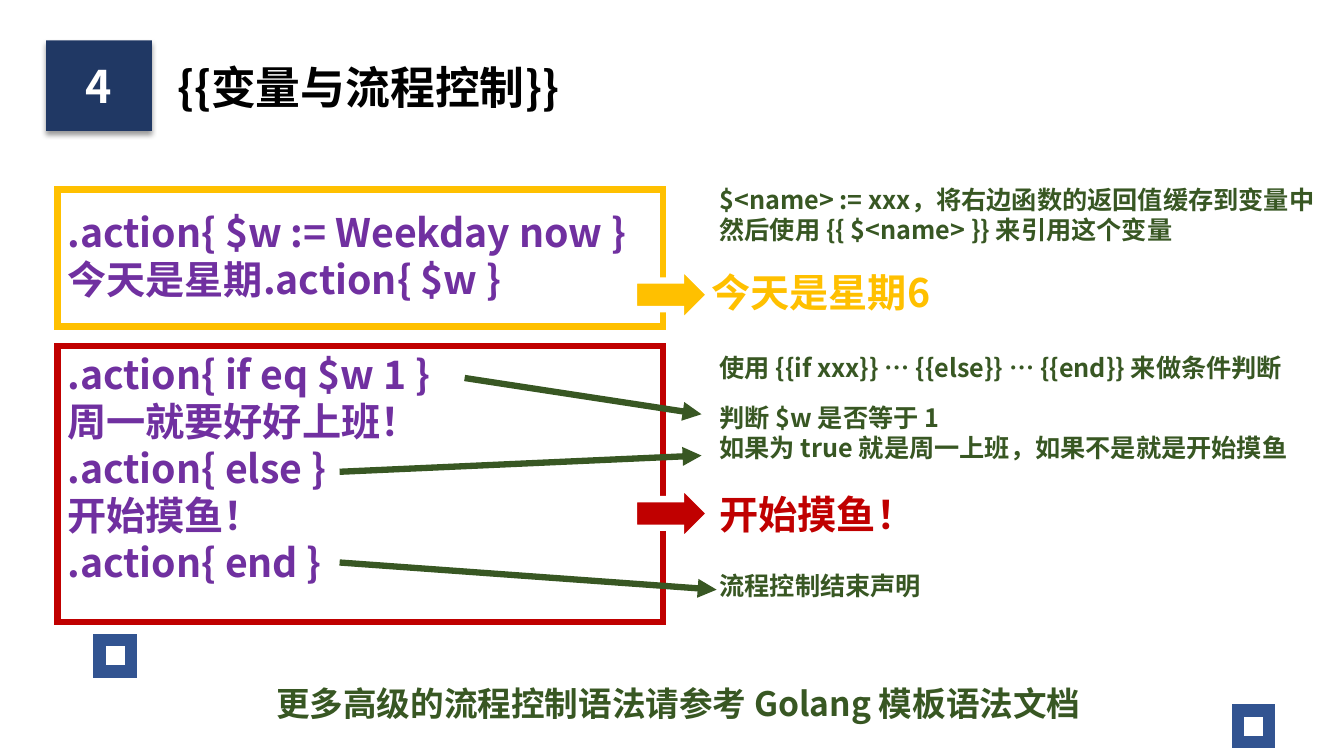
from lxml.etree import SubElement as Sub
from pptx import Presentation
from pptx.dml.color import RGBColor as RGB
from pptx.enum.shapes import MSO_CONNECTOR as Link, MSO_SHAPE as Kind
from pptx.enum.text import MSO_ANCHOR as Anchor, PP_ALIGN as Align
from pptx.oxml.ns import qn
from pptx.util import Pt

NAVY, BLUE, GREEN, PURPLE = "203864", "325491", "385723", "7030A0"
GOLD, RED, WHITE, BLACK = "FFC000", "C00000", "FFFFFF", "000000"


def color(text):
    return RGB.from_string(text)


def apply(obj, values):
    for name, value in values.items():
        setattr(obj, name, value)


class Page:
    font = "Noto Sans CJK SC"
    heavy = 4.5
    pitch = 1.2

    def __init__(self, slide):
        self.slide = slide
        self.shapes = slide.shapes

    def typeset(self, frame, lines, size, tint, align=Align.LEFT, gaps=None):
        """Fill a frame; gaps maps a line number to the space before it."""
        frame.word_wrap = True
        for i, line in enumerate(lines):
            para = frame.paragraphs[0] if i == 0 else frame.add_paragraph()
            apply(para, {"alignment": align,
                         "line_spacing": Pt(size * self.pitch),
                         "space_before": Pt((gaps or {}).get(i, 0))})
            run = para.add_run()
            run.text = line
            apply(run.font, {"size": Pt(size), "bold": True, "name": self.font})
            run.font.color.rgb = color(tint)
            Sub(run.font._element, qn("a:ea"), typeface=self.font)

    def text(self, box, lines, size, tint, gaps=None):
        frame = self.shapes.add_textbox(*map(Pt, box)).text_frame
        self.typeset(frame, lines, size, tint, gaps=gaps)

    def shape(self, kind, box, fill=None, line=None, width=heavy):
        item = self.shapes.add_shape(kind, *map(Pt, box))
        item.shadow.inherit = False
        if fill:
            item.fill.solid()
            item.fill.fore_color.rgb = color(fill)
        else:
            item.fill.background()
        if line:
            item.line.color.rgb = color(line)
            item.line.width = Pt(width)
            Sub(item.line._get_or_add_ln(), qn("a:miter"), lim="800000")
        else:
            item.line.fill.background()
        return item

    def badge(self, box, label):
        item = self.shape(Kind.RECTANGLE, box, NAVY)
        effects = item._element.spPr.find(qn("a:effectLst"))
        shade = Sub(effects, qn("a:outerShdw"), blurRad=str(Pt(4)),
                    dist=str(Pt(3)), dir="5400000", rotWithShape="0")
        tint = Sub(shade, qn("a:srgbClr"), val=BLACK)
        Sub(tint, qn("a:alpha"), val="40000")
        item.text_frame.vertical_anchor = Anchor.MIDDLE
        self.typeset(item.text_frame, [label], 32, WHITE, Align.CENTER)

    def arrow(self, *ends):
        item = self.shapes.add_connector(Link.STRAIGHT, *map(Pt, ends))
        item.line.color.rgb = color(GREEN)
        item.line.width = Pt(self.heavy)
        Sub(item.line._get_or_add_ln(), qn("a:tailEnd"), type="triangle")
        Sub(item._element.spPr, qn("a:effectLst"))


def main():
    deck = Presentation()
    apply(deck, {"slide_width": Pt(960), "slide_height": Pt(540)})
    page = Page(deck.slides.add_slide(deck.slide_layouts[6]))

    for x, y in ((71.3, 457.2), (884.2, 507.6)):
        page.shape(Kind.RECTANGLE, (x, y, 22.3, 22.3), line=BLUE, width=9)
    page.badge((33, 28.8, 75.6, 64.8), "4")
    page.text((119.5, 38.9, 290.9, 46), ["{{变量与流程控制}}"], 32, BLACK)

    left, wide = 41, 432.7
    code = [".action{ $w := Weekday now }", "今天是星期.action{ $w }",
            ".action{ if eq $w 1 }", "周一就要好好上班！",
            ".action{ else }", "开始摸鱼！", ".action{ end }"]
    page.text((left, 145.4, wide, 288.7), code, 28, PURPLE, gaps={2: 34})
    for y, high, tint in ((135.4, 97.9, GOLD), (247, 197.3, RED)):
        page.shape(Kind.RECTANGLE, (left, y, wide, high), line=tint)

    notes = [
        (128.2, ["$<name> := xxx，将右边函数的返回值缓存到变量中",
                 "然后使用 {{ $<name> }} 来引用这个变量"]),
        (248.4, ["使用 {{if xxx}} … {{else}} … {{end}} 来做条件判断"]),
        (283.7, ["判断 $w 是否等于 1",
                 "如果为 true 就是周一上班，如果不是就是开始摸鱼"]),
        (403.9, ["流程控制结束声明"]),
    ]
    for y, lines in notes:
        page.text((506.9, y, 457.9, 6.5 + 22.3 * len(lines)), lines, 18, GREEN)

    results = [(501.1, 187.9, 190.1, GOLD, "今天是星期6"),
               (506.9, 347, 346.3, RED, "开始摸鱼！")]
    for x, y, top, tint, line in results:
        page.text((x, y, 218.2, 41), [line], 28, tint)
        page.shape(Kind.RIGHT_ARROW, (452.9, top, 54, 41), tint, WHITE)

    page.arrow(331.9, 270, 501.1, 295.9)
    page.arrow(242.6, 337, 501.1, 325.4)
    page.arrow(242.6, 401.8, 511.9, 421.2)
    page.text((190.1, 484.6, 704.9, 36),
              ["更多高级的流程控制语法请参考 Golang 模板语法文档"], 24, GREEN)

    deck.save("out.pptx")


if __name__ == "__main__":
    main()
